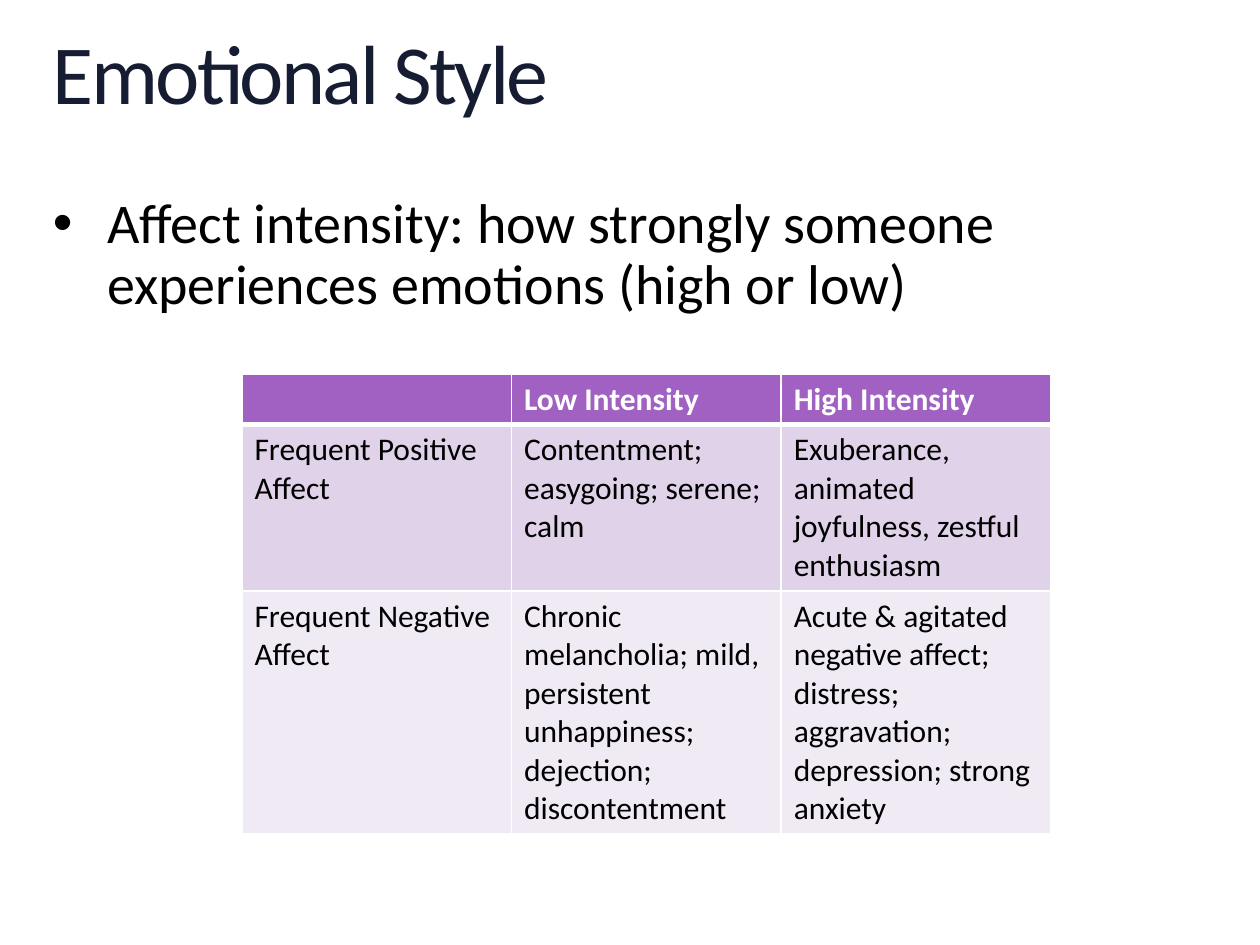
"""Build the Emotional Style slide: a title, a bullet and an affect table."""
from lxml import etree
from pptx import Presentation
from pptx import util as u
from pptx.dml.color import RGBColor
from pptx.oxml import ns

TITLE = "Emotional Style"
BULLET = "Affect intensity: how strongly someone experiences emotions (high or low)"
ROWS = [
    ["", "Low Intensity", "High Intensity"],
    ["Frequent Positive Affect", "Contentment; easygoing; serene; calm",
     "Exuberance, animated joyfulness, zestful enthusiasm"],
    ["Frequent Negative Affect",
     "Chronic melancholia; mild, persistent unhappiness; dejection; discontentment",
     "Acute & agitated negative affect; distress; aggravation; depression; strong anxiety"],
]
THEME = {
    "title": {"name": "Calibri", "size": u.Pt(48), "color": "161D32"},
    "body": {"name": "Calibri", "size": u.Pt(32), "color": "000000"},
    "header": {"name": "Calibri", "size": u.Pt(18), "bold": True, "color": "FFFFFF"},
    "cell": {"name": "Calibri", "size": u.Pt(18), "bold": False, "color": "000000"},
    "fills": ["A061C3", "DFD2E9", "F0EAF5"],
    "border": "FFFFFF",
}
LEFT, WIDTH = 0.42, 9.17
TABLE_LEFT, TABLE_TOP, COL_WIDTH = 1.92, 2.97, 2.14
ROW_HEIGHTS = [0.4, 1.32, 1.93]


def set_font(font, style):
    for key, value in style.items():
        if key == "color":
            font.color.rgb = RGBColor.from_string(value)
        else:
            setattr(font, key, value)


def add_text(slide, top, height, content, style):
    sp = slide.shapes.add_textbox(*map(u.Inches, (LEFT, top, WIDTH, height)))
    tf = sp.text_frame
    tf.word_wrap = True
    for side in ("left", "top", "right", "bottom"):
        setattr(tf, f"margin_{side}", 0)
    p = tf.paragraphs[0]
    p.line_spacing = 0.9
    r = p.add_run()
    r.text = content
    set_font(r.font, style)
    return p


def add_bullet(p, indent):
    pPr = p._p.get_or_add_pPr()
    pPr.set("marL", str(u.Inches(indent)))
    pPr.set("indent", str(-u.Inches(indent)))
    etree.SubElement(pPr, ns.qn("a:buFont"), typeface="Arial")
    etree.SubElement(pPr, ns.qn("a:buChar"), char="•")


def add_borders(cell, widths):
    tcPr = cell._tc.get_or_add_tcPr()
    for side, width in widths.items():
        ln = etree.SubElement(tcPr, ns.qn(f"a:ln{side}"), w=str(u.Pt(width)))
        fill = etree.SubElement(ln, ns.qn("a:solidFill"))
        etree.SubElement(fill, ns.qn("a:srgbClr"), val=THEME["border"])


def add_affect_table(slide):
    cols = len(ROWS[0])
    box = (TABLE_LEFT, TABLE_TOP, COL_WIDTH * cols, sum(ROW_HEIGHTS))
    table = slide.shapes.add_table(len(ROWS), cols, *map(u.Inches, box)).table
    for col in table.columns:
        col.width = u.Inches(COL_WIDTH)
    for i, (row, height) in enumerate(zip(ROWS, ROW_HEIGHTS)):
        table.rows[i].height = u.Inches(height)
        style = THEME["cell" if i else "header"]
        for j, content in enumerate(row):
            cell = table.cell(i, j)
            add_borders(cell, {"L": 1, "R": 1, "T": 3 if i == 1 else 1, "B": 1 if i else 3})
            cell.fill.solid()
            cell.fill.fore_color.rgb = RGBColor.from_string(THEME["fills"][i])
            cell.text = content
            p = cell.text_frame.paragraphs[0]
            for target in p.runs or [p]:
                set_font(target.font, style)


def main():
    prs = Presentation()
    prs.slide_width, prs.slide_height = u.Inches(10), u.Inches(7.5)
    slide = prs.slides.add_slide(prs.slide_layouts[6])
    title = add_text(slide, 0.25, 0.73, TITLE, THEME["title"])
    title.runs[0]._r.get_or_add_rPr().set("spc", "-150")
    add_bullet(add_text(slide, 1.55, 1.56, BULLET, THEME["body"]), 0.43)
    add_affect_table(slide)
    prs.save("out.pptx")


if __name__ == "__main__":
    main()
